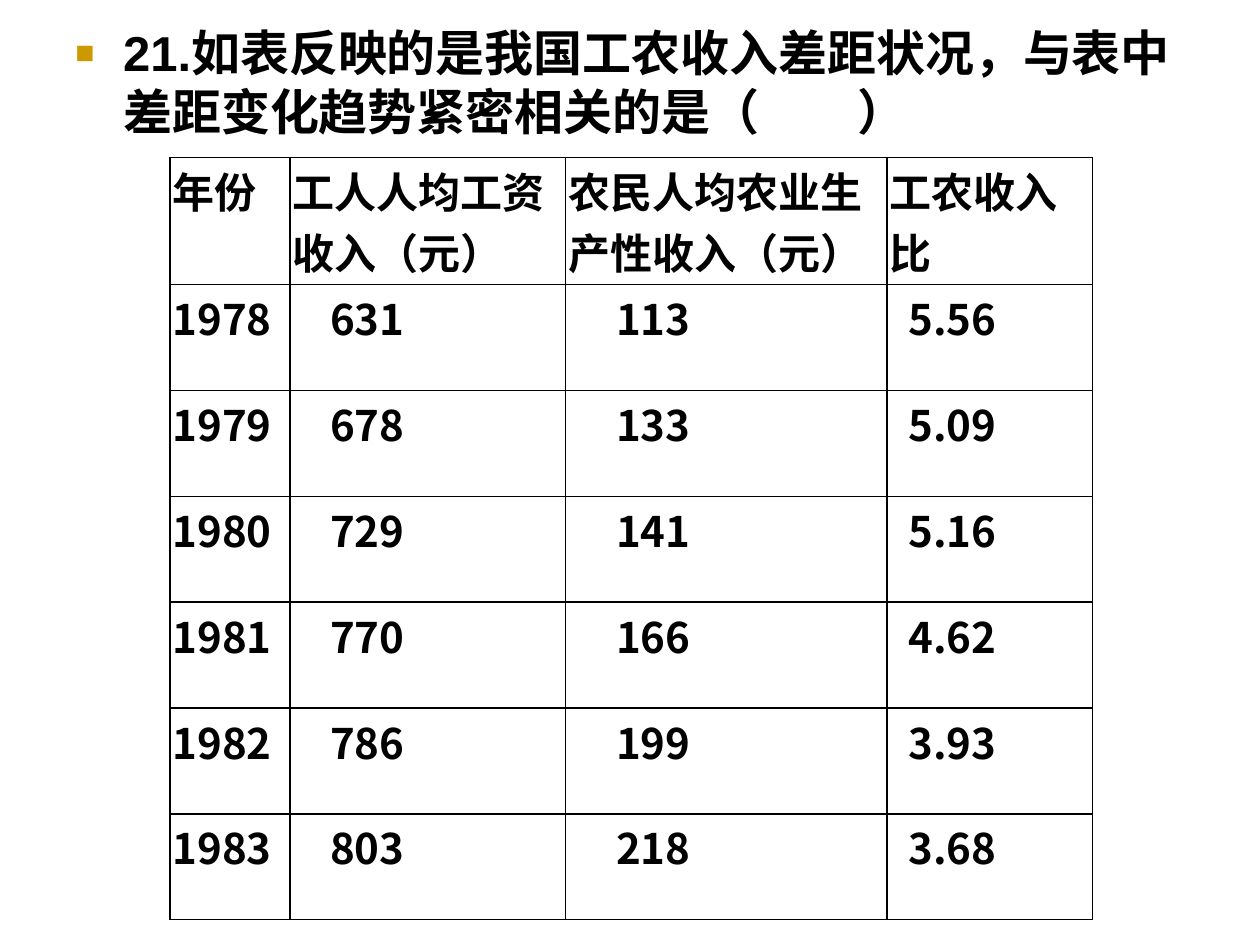
from pptx import Presentation
from pptx.dml.color import RGBColor
from pptx.oxml import parse_xml
from pptx.oxml.ns import nsdecls
from pptx.util import Inches, Pt

NS = nsdecls("a")


def color(code):
    return RGBColor.from_string(code)


def style(par, text, face, size):
    run = par.add_run()
    run.text = text
    look = {"name": face, "size": Pt(size), "bold": True}
    for key, val in look.items():
        setattr(run.font, key, val)
    run.font.color.rgb = color("000000")
    run._r.get_or_add_rPr().append(parse_xml(f'<a:ea {NS} typeface="{face}"/>'))


deck = Presentation()
deck.slide_width, deck.slide_height = Inches(10), Inches(7.5)
slide = deck.slides.add_slide(deck.slide_layouts[6])

box = slide.shapes.add_textbox(Inches(0.5), Inches(0.13), Inches(9), Inches(6.86))
box.text_frame.word_wrap = True
par = box.text_frame.paragraphs[0]
par.space_before = Pt(5.6)
style(par, "21.如表反映的是我国工农收入差距状况，与表中差距变化趋势紧密相关的是（　　）", "Arial", 28)
props = par._p.get_or_add_pPr()
props.set("marL", str(Inches(0.38)))
props.set("indent", str(-Inches(0.38)))
for part in (
    f'<a:buClr {NS}><a:srgbClr val="CC9900"/></a:buClr>',
    f'<a:buSzPct {NS} val="65000"/>',
    f'<a:buFont {NS} typeface="Arial"/>',
    f'<a:buChar {NS} char="■"/>',
):
    props.append(parse_xml(part))

rows = [
    ("年份", "工人人均工资收入（元）", "农民人均农业生产性收入（元）", "工农收入比"),
    ("1978", "631", "113", "5.56"),
    ("1979", "678", "133", "5.09"),
    ("1980", "729", "141", "5.16"),
    ("1981", "770", "166", "4.62"),
    ("1982", "786", "199", "3.93"),
    ("1983", "803", "218", "3.68"),
]
wide = [0.95, 2.19, 2.55, 1.63]
tall = [1.01] + [0.84] * (len(rows) - 1)
shift = [0, 0.3, 0.38, 0.15]
sides = ["left", "right", "top", "bottom"]

table = slide.shapes.add_table(
    len(rows), len(wide), Inches(1.35), Inches(1.25), Inches(sum(wide)), Inches(sum(tall))
).table
table.first_row = table.horz_banding = False
for col, width in zip(table.columns, wide):
    col.width = Inches(width)

for r, row in enumerate(rows):
    table.rows[r].height = Inches(tall[r])
    for c, text in enumerate(row):
        cell = table.cell(r, c)
        for side in sides:
            setattr(cell, f"margin_{side}", Inches(0.02))
        par = cell.text_frame.paragraphs[0]
        style(par, text, "Noto Sans CJK SC", 24)
        if r:
            par._p.get_or_add_pPr().set("marL", str(Inches(shift[c])))
        props = cell._tc.get_or_add_tcPr()
        for side in sides:
            tag = f"ln{side[0].upper()}"
            props.append(parse_xml(
                f'<a:{tag} {NS} w="{Pt(1)}"><a:solidFill>'
                f'<a:srgbClr val="000000"/></a:solidFill></a:{tag}>'
            ))
        cell.fill.background()

deck.save("out.pptx")
